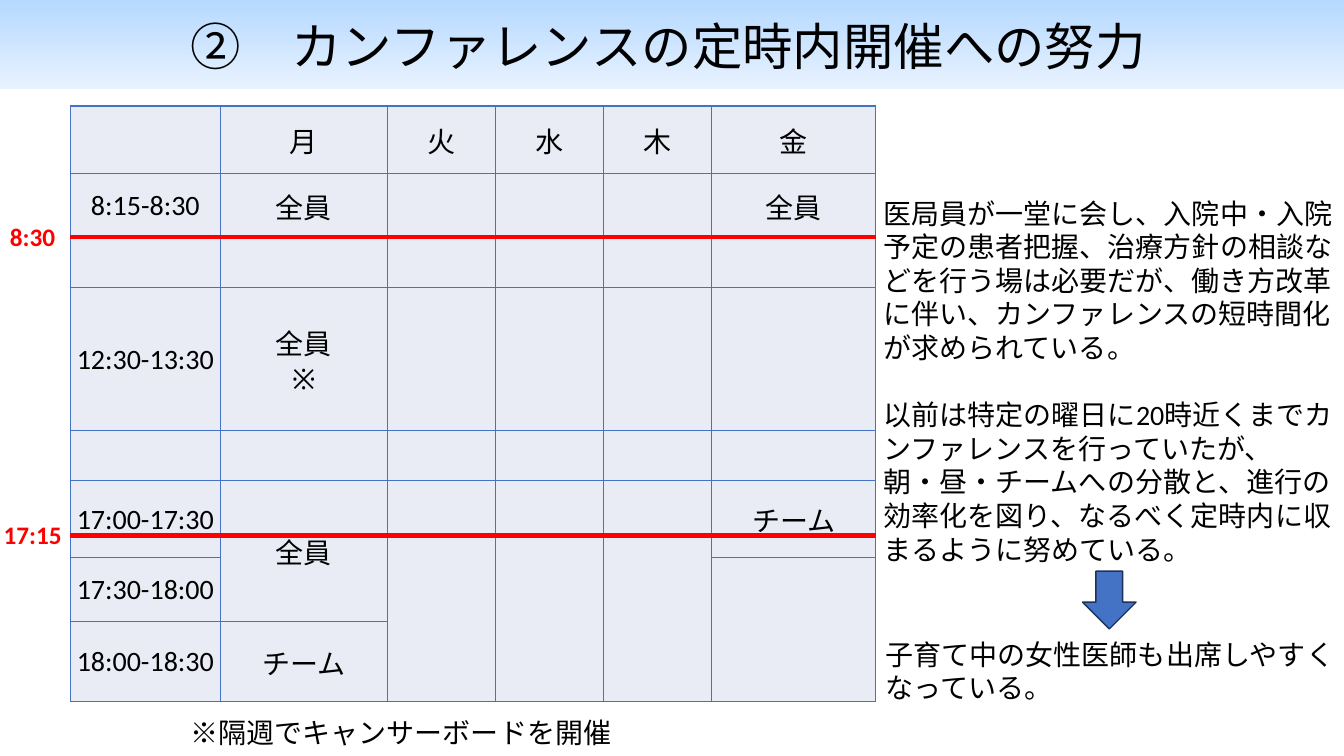
from lxml.etree import SubElement
from pptx import Presentation
from pptx.dml.color import RGBColor
from pptx.enum.shapes import MSO_CONNECTOR, MSO_SHAPE
from pptx.enum.text import MSO_ANCHOR, MSO_AUTO_SIZE, PP_ALIGN
from pptx.oxml import parse_xml
from pptx.oxml.ns import nsdecls, qn
from pptx.util import Emu, Pt

SCALE = 9525  # EMU per px, 96 px to the inch
BLACK = RGBColor(0x00, 0x00, 0x00)
RED = RGBColor(0xFF, 0x00, 0x00)
BLUE = RGBColor(0x44, 0x72, 0xC4)
NAVY = RGBColor(0x1E, 0x32, 0x56)
CELL_FILL = RGBColor(0xE9, 0xEB, 0xF5)
BAND_TOP = RGBColor(0xB5, 0xD9, 0xFF)
BAND_BOTTOM = RGBColor(0xE8, 0xF2, 0xFF)

COLUMN_WIDTHS = [143, 159, 103, 103, 103, 156]
ROW_HEIGHTS = [64, 61, 48, 136, 48, 73, 61, 76]
SCHEDULE = [
    ["", "月", "火", "水", "木", "金"],
    ["8:15-8:30", "全員", "", "", "", "全員"],
    [""] * 6,
    ["12:30-13:30", "全員\n※", "", "", "", ""],
    [""] * 6,
    ["17:00-17:30", "全員", "", "", "", "チーム"],
    ["17:30-18:00", "", "", "", "", ""],
    ["18:00-18:30", "チーム", "", "", "", ""],
]
# First and last (row, column) of each merged block
MERGES = [((5, 1), (6, 1)), ((5, 2), (7, 2)), ((5, 3), (7, 3)),
          ((5, 4), (7, 4)), ((6, 5), (7, 5))]
REASONS = [
    "医局員が一堂に会し、入院中・入院予定の患者把握、治療方針の相談などを行う場は必要だが、"
    "働き方改革に伴い、カンファレンスの短時間化が求められている。",
    "以前は特定の曜日に20時近くまでカンファレンスを行っていたが、",
    "朝・昼・チームへの分散と、進行の効率化を図り、なるべく定時内に収まるように努めている。",
]


def px(length):
    return Emu(length * SCALE)


def px_box(box):
    return [px(length) for length in box]


def add_run(paragraph, text, size=20, color=BLACK, bold=False, font="Calibri"):
    run = paragraph.add_run()
    run.text = text
    run.font.size = Pt(size)
    run.font.name = font
    run.font.bold = bold
    run.font.color.rgb = color


def add_text(slide, box, lines, **style):
    frame = slide.shapes.add_textbox(*px_box(box)).text_frame
    frame.word_wrap = True
    for index, line in enumerate(lines):
        paragraph = frame.add_paragraph() if index else frame.paragraphs[0]
        add_run(paragraph, line, **style)
    return frame


def add_heading(slide, box):
    left, top, width, height = box
    # Gradient band behind the title
    band = slide.shapes.add_shape(MSO_SHAPE.RECTANGLE, *px_box(box))
    band.shadow.inherit = False
    band.line.fill.background()
    band.fill.gradient()
    band.fill.gradient_angle = 270
    for stop, color in zip(band.fill.gradient_stops, (BAND_TOP, BAND_BOTTOM)):
        stop.color.rgb = color
    slide.shapes.title._element.addprevious(band._element)

    # Title
    title = slide.shapes.title
    title.left, title.top, title.width, title.height = px_box(
        (left + 172, top + 9, 935, height - 17))
    frame = title.text_frame
    frame.auto_size = MSO_AUTO_SIZE.NONE
    frame.vertical_anchor = MSO_ANCHOR.MIDDLE
    frame.paragraphs[0].alignment = PP_ALIGN.LEFT
    add_run(frame.paragraphs[0], "②　カンファレンスの定時内開催への努力", size=36)


def add_borders(cell):
    properties = cell._tc.get_or_add_tcPr()
    for index, side in enumerate(("lnL", "lnR", "lnT", "lnB")):
        border = parse_xml(
            f'<a:{side} {nsdecls("a")} w="{Pt(1)}"><a:solidFill>'
            f'<a:srgbClr val="{BLUE}"/></a:solidFill></a:{side}>')
        properties.insert(index, border)


def fill_cell(cell, text, font):
    cell.fill.solid()
    cell.fill.fore_color.rgb = CELL_FILL
    cell.vertical_anchor = MSO_ANCHOR.MIDDLE
    cell.margin_left = cell.margin_right = cell.margin_top = px(1)
    cell.margin_bottom = 0
    add_borders(cell)
    frame = cell.text_frame
    for index, line in enumerate(text.split("\n") if text else []):
        paragraph = frame.add_paragraph() if index else frame.paragraphs[0]
        paragraph.alignment = PP_ALIGN.CENTER
        add_run(paragraph, line, font=font)


def add_schedule(slide, left, top):
    box = (left, top, sum(COLUMN_WIDTHS), sum(ROW_HEIGHTS))
    table = slide.shapes.add_table(
        len(ROW_HEIGHTS), len(COLUMN_WIDTHS), *px_box(box)).table
    table.first_row = table.horz_banding = False
    for column, width in zip(table.columns, COLUMN_WIDTHS):
        column.width = px(width)
    for row, height in zip(table.rows, ROW_HEIGHTS):
        row.height = px(height)
    for row, texts in enumerate(SCHEDULE):
        for column, text in enumerate(texts):
            font = "Arial" if (row, column) == (1, 1) else "Calibri"
            fill_cell(table.cell(row, column), text, font)
    for first, last in MERGES:
        table.cell(*first).merge(table.cell(*last))

    # Start and end of working hours
    work_start = top + sum(ROW_HEIGHTS[:2])
    add_time_limit(slide, "8:30", 0, left, work_start)
    add_time_limit(slide, "17:15", -6, left, work_start + 284)

    # Footnote
    add_text(slide, (left + 105, top + 576, 420, 42), ["※隔週でキャンサーボードを開催"])


def add_time_limit(slide, time, label_left, left, y):
    limit = slide.shapes.add_connector(
        MSO_CONNECTOR.STRAIGHT,
        *px_box((left, y, left + sum(COLUMN_WIDTHS), y)))
    limit.line.color.rgb = RED
    limit.line.width = Pt(3)
    SubElement(limit._element.spPr, qn("a:effectLst"))
    add_text(slide, (label_left, y - 20, 80, 38), [time],
             size=18, color=RED, bold=True)


def add_commentary(slide, left, top):
    # Reasons for the change
    reasons = add_text(slide, (left, top, 447, 365), REASONS)
    reasons.paragraphs[1].space_before = Pt(24)

    # Arrow to the result
    arrow = slide.shapes.add_shape(
        MSO_SHAPE.DOWN_ARROW, *px_box((left + 199, top + 362, 51, 55)))
    arrow.shadow.inherit = False
    arrow.fill.solid()
    arrow.fill.fore_color.rgb = BLUE
    arrow.line.color.rgb = NAVY
    arrow.line.width = Pt(1)

    # Result
    add_text(slide, (left + 2, top + 420, 447, 74),
             ["子育て中の女性医師も出席しやすくなっている。"])


def main():
    presentation = Presentation()
    presentation.slide_width, presentation.slide_height = px(1280), px(720)
    slide = presentation.slides.add_slide(presentation.slide_layouts[5])
    add_heading(slide, (0, 0, 1280, 85))
    add_schedule(slide, 67, 101)
    add_commentary(slide, 832, 182)
    presentation.save("out.pptx")


if __name__ == "__main__":
    main()
